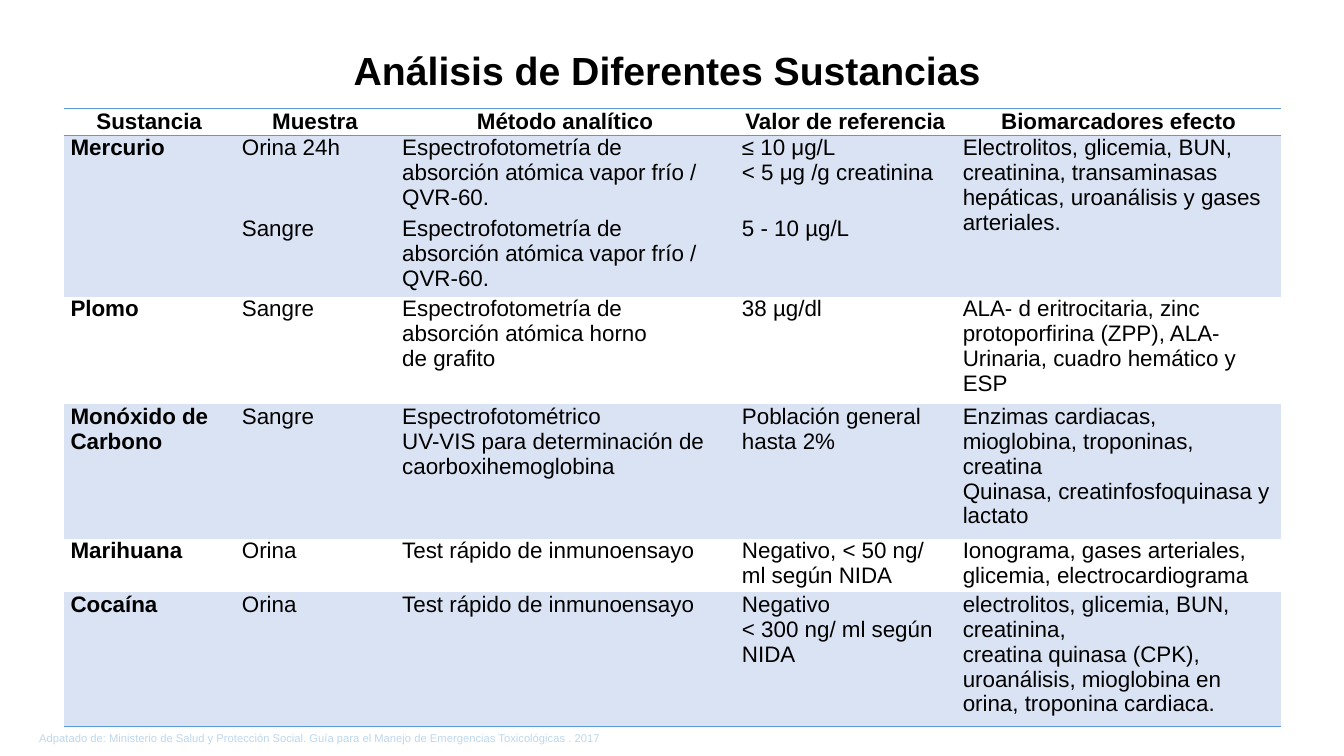
"""Build the slide that lists the laboratory analysis of different substances."""
from dataclasses import dataclass

from lxml import etree
from pptx import Presentation
from pptx.dml.color import RGBColor
from pptx.enum.text import MSO_ANCHOR, PP_ALIGN
from pptx.oxml.ns import qn
from pptx.slide import Slide
from pptx.table import Table, _Cell
from pptx.text.text import TextFrame
from pptx.util import Inches, Pt

LEFT, CENTER = PP_ALIGN.LEFT, PP_ALIGN.CENTER
TOP, MIDDLE = MSO_ANCHOR.TOP, MSO_ANCHOR.MIDDLE
PLAIN_TABLE_STYLE = "{2D5ABB26-0587-4C30-8999-92F81FD0307C}"


@dataclass(frozen=True)
class Theme:
    """Colours and type sizes of the slide."""
    font: str = "Arial"
    ink: str = "000000"
    band: str = "DAE3F3"
    rule: str = "5B9BD5"
    credit: str = "BDD7EE"
    title_size: int = 28
    table_size: int = 16
    credit_size: int = 8


@dataclass(frozen=True)
class Column:
    """A table column with its heading and width in inches."""
    heading: str
    width: float


@dataclass(frozen=True)
class Analysis:
    """A table row; an empty substance continues the one above."""
    substance: str
    sample: str
    method: str
    reference: str
    biomarkers: str
    lines: int
    banded: bool = False

    def texts(self) -> list[str]:
        """Return the cell texts in column order."""
        return [self.substance, self.sample, self.method, self.reference, self.biomarkers]


@dataclass(frozen=True)
class Label:
    """A text box with its place in inches."""
    text: str
    left: float
    top: float
    width: float
    height: float
    size: int
    color: str
    bold: bool = False
    align: PP_ALIGN = LEFT
    anchor: MSO_ANCHOR = TOP
    spacing: float = 1.0


THEME = Theme()
TABLE_LEFT, TABLE_TOP, TABLE_HEIGHT = 0.63, 1.08, 6.13
CELL_INSET = 0.07
COLUMNS = [
    Column("Sustancia", 1.7),
    Column("Muestra", 1.59),
    Column("Método analítico", 3.37),
    Column("Valor de referencia", 2.19),
    Column("Biomarcadores efecto", 3.23),
]
VAPOUR_METHOD = "Espectrofotometría de\nabsorción atómica vapor frío / QVR-60."
RAPID_TEST = "Test rápido de inmunoensayo"
ANALYSES = [
    Analysis("Mercurio", "Orina 24h", VAPOUR_METHOD, "≤ 10 μg/L\n< 5 μg /g creatinina",
             "Electrolitos, glicemia, BUN, creatinina, transaminasas hepáticas, "
             "uroanálisis y gases arteriales.", 3, True),
    Analysis("", "Sangre", VAPOUR_METHOD, "5 - 10 µg/L", "", 3, True),
    Analysis("Plomo", "Sangre",
             "Espectrofotometría de\nabsorción atómica horno\nde grafito", "38 µg/dl",
             "ALA- d eritrocitaria, zinc protoporfirina (ZPP), ALA-Urinaria, "
             "cuadro hemático y ESP", 4),
    Analysis("Monóxido de Carbono", "Sangre",
             "Espectrofotométrico\nUV-VIS para determinación de caorboxihemoglobina",
             "Población general\nhasta 2%",
             "Enzimas cardiacas, mioglobina, troponinas, creatina\n"
             "Quinasa, creatinfosfoquinasa y lactato", 5, True),
    Analysis("Marihuana", "Orina", RAPID_TEST, "Negativo, < 50 ng/ ml según NIDA",
             "Ionograma, gases arteriales, glicemia, electrocardiograma", 2),
    Analysis("Cocaína", "Orina", RAPID_TEST, "Negativo\n< 300 ng/ ml según NIDA",
             "electrolitos, glicemia, BUN, creatinina,\ncreatina quinasa (CPK), "
             "uroanálisis, mioglobina en orina, troponina cardiaca.", 5, True),
]
LABELS = [
    Label("Análisis de Diferentes Sustancias ", 0.92, 0.23, 11.5, 0.98,
          THEME.title_size, THEME.ink, True, CENTER, MIDDLE, 0.9),
    Label("Adpatado de: Ministerio de Salud y Protección Social. Guía para el Manejo "
          "de Emergencias Toxicológicas . 2017", 0.29, 7.21, 6.38, 0.24,
          THEME.credit_size, THEME.credit),
]


def write_text(frame: TextFrame, text: str, size: int, color: str, bold: bool,
               align: PP_ALIGN, spacing: float = 1.0) -> None:
    """Fill a text frame with one paragraph per line of text."""
    frame.text = text
    frame.word_wrap = True
    for paragraph in frame.paragraphs:
        paragraph.alignment = align
        paragraph.line_spacing = spacing
        paragraph.font.name = THEME.font
        paragraph.font.size = Pt(size)
        paragraph.font.bold = bold
        paragraph.font.color.rgb = RGBColor.from_string(color)


def add_label(page: Slide, label: Label) -> None:
    """Draw a text box."""
    box = page.shapes.add_textbox(Inches(label.left), Inches(label.top),
                                  Inches(label.width), Inches(label.height))
    box.text_frame.vertical_anchor = label.anchor
    write_text(box.text_frame, label.text, label.size, label.color, label.bold,
               label.align, label.spacing)


def add_rule(cell: _Cell, side: str) -> None:
    """Draw a border on one side of a cell, a:lnT or a:lnB."""
    properties = cell._tc.get_or_add_tcPr()
    line = etree.Element(qn(side), w=str(Pt(1)))
    fill = etree.SubElement(line, qn("a:solidFill"))
    etree.SubElement(fill, qn("a:srgbClr"), val=THEME.rule)
    properties.insert(0, line)


def fill_cell(cell: _Cell, text: str, bold: bool, align: PP_ALIGN, banded: bool) -> None:
    """Set the text, insets and fill of a cell."""
    cell.margin_left = cell.margin_right = Inches(CELL_INSET)
    cell.margin_top = cell.margin_bottom = 0
    write_text(cell.text_frame, text, THEME.table_size, THEME.ink, bold, align)
    if banded:
        cell.fill.solid()
        cell.fill.fore_color.rgb = RGBColor.from_string(THEME.band)
    else:
        cell.fill.background()


def add_analysis_table(page: Slide) -> Table:
    """Draw the table, with row heights in proportion to their text lines."""
    width = sum(column.width for column in COLUMNS)
    table = page.shapes.add_table(len(ANALYSES) + 1, len(COLUMNS), Inches(TABLE_LEFT),
                                  Inches(TABLE_TOP), Inches(width),
                                  Inches(TABLE_HEIGHT)).table
    table.first_row = table.horz_banding = False
    table._tbl.tblPr.find(qn("a:tableStyleId")).text = PLAIN_TABLE_STYLE
    line_counts = [1] + [analysis.lines for analysis in ANALYSES]
    for row, count in zip(table.rows, line_counts):
        row.height = Inches(TABLE_HEIGHT * count / sum(line_counts))
    for index, column in enumerate(COLUMNS):
        table.columns[index].width = Inches(column.width)
        heading = table.cell(0, index)
        fill_cell(heading, column.heading, True, CENTER, False)
        add_rule(heading, "a:lnB")
        add_rule(heading, "a:lnT")
    for row_index, analysis in enumerate(ANALYSES, start=1):
        for index, text in enumerate(analysis.texts()):
            cell = table.cell(row_index, index)
            fill_cell(cell, text, index == 0, LEFT, analysis.banded)
            if not text:
                table.cell(row_index - 1, index).merge(cell)
            if row_index == len(ANALYSES):
                add_rule(cell, "a:lnB")
    return table


def main() -> None:
    """Build and save the deck."""
    deck = Presentation()
    deck.slide_width, deck.slide_height = Inches(13.33), Inches(7.5)
    page = deck.slides.add_slide(deck.slide_layouts[6])
    add_analysis_table(page)
    for label in LABELS:
        add_label(page, label)
    deck.save("out.pptx")


if __name__ == "__main__":
    main()
